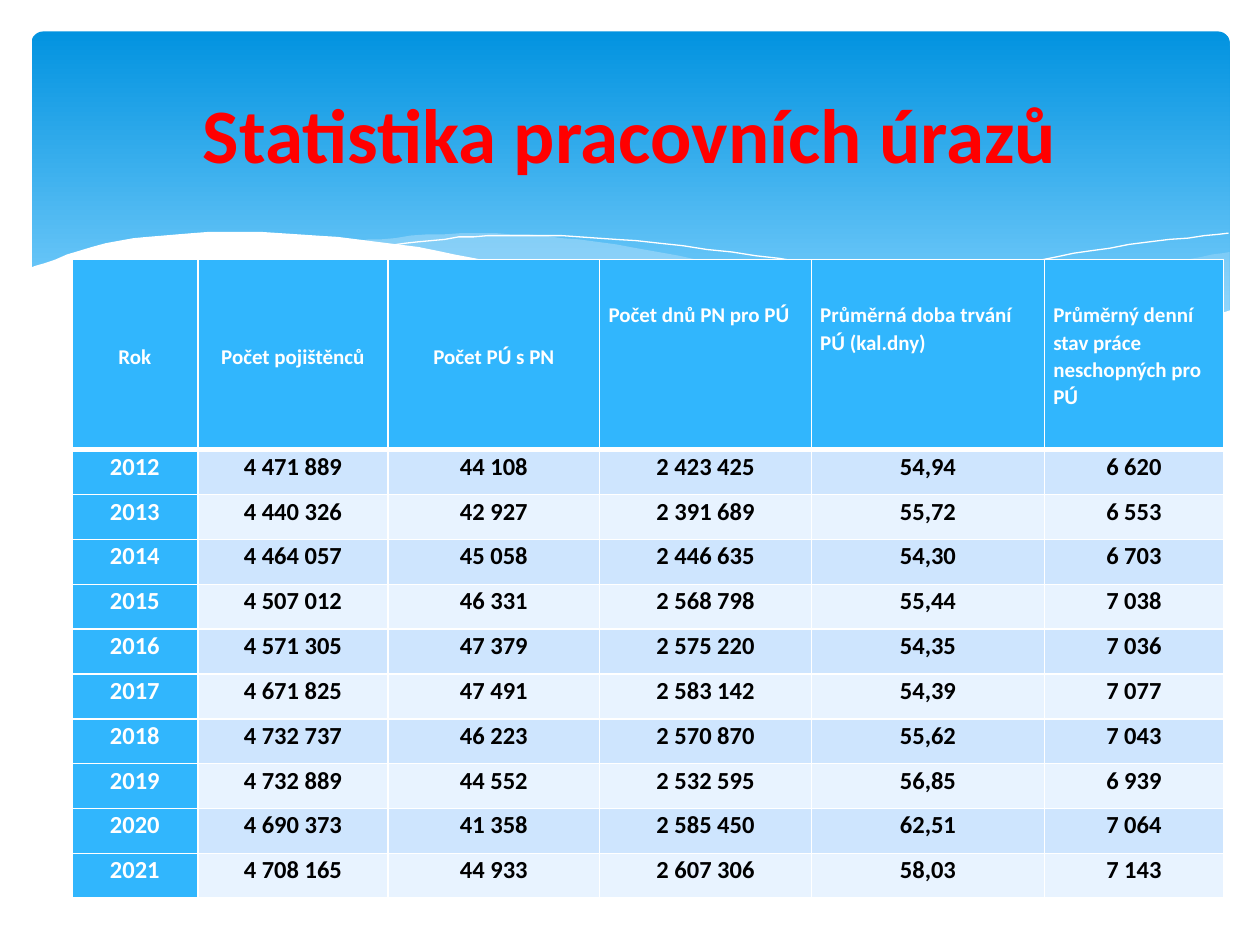
from lxml import etree
from pptx import Presentation
from pptx.dml.color import RGBColor
from pptx.enum.shapes import MSO_SHAPE
from pptx.enum.text import MSO_ANCHOR, PP_ALIGN
from pptx.oxml import parse_xml
from pptx.oxml.ns import qn
from pptx.util import Inches, Pt

ROUND = MSO_SHAPE.ROUNDED_RECTANGLE
MIDDLE, TOP = MSO_ANCHOR.MIDDLE, MSO_ANCHOR.TOP
CENTER, LEFT = PP_ALIGN.CENTER, PP_ALIGN.LEFT
FONT = "Calibri"
NS = "http://schemas.openxmlformats.org/drawingml/2006/main"
HEX = {"deep": "0293E0", "sky": "83D3FE", "mist": "C6E7FC", "white": "FFFFFF",
       "red": "FF0000", "black": "000000", "head": "31B6FD",
       "odd": "CEE5FE", "even": "E8F3FF"}
COLOR = {name: RGBColor.from_string(code) for name, code in HEX.items()}
STEPS = 8


def smooth(knots):
    """Return points on a Catmull-Rom curve through the knots."""
    ends = [knots[0], *knots, knots[-1]]
    points = []
    for four in zip(ends, ends[1:], ends[2:], ends[3:]):
        for step in range(STEPS):
            t = step / STEPS
            points.append(tuple(
                b + t * (c - a + t * (2 * a - 5 * b + 4 * c - d
                                      + t * (3 * b - a - 3 * c + d))) / 2
                for a, b, c, d in zip(*four)))
    return points + [knots[-1]]


def edge(cell, side, width):
    """Add one white border; call in the order L, R, T, B, before the fill."""
    cell._tc.get_or_add_tcPr().append(parse_xml(
        f'<a:ln{side} xmlns:a="{NS}" w="{Pt(width)}"><a:solidFill>'
        f'<a:srgbClr val="{HEX["white"]}"/></a:solidFill></a:ln{side}>'))


prs = Presentation()
prs.slide_width, prs.slide_height = Inches(10), Inches(7.5)
slide = prs.slides.add_slide(prs.slide_layouts[5])
shapes = slide.shapes

# Blue banner
banner = shapes.add_shape(ROUND, Inches(0.25), Inches(0.25), Inches(9.51), Inches(2.7))
banner.adjustments[0] = 0.034
banner.shadow.inherit = False
banner.line.fill.background()
banner.fill.gradient()
banner.fill.gradient_angle = 270
for stop, spot, name in zip(banner.fill.gradient_stops, (0, 0.9), ("deep", "sky")):
    stop.position = spot
    stop.color.rgb = COLOR[name]

# Waves: fill, opacity in percent, smooth stretches in inches.
# A wave without a fill is a thin white line.
WAVES = [
    ("mist", 29, [[(9.76, 2), (8.91, 2.16), (7.53, 2.48), (6.61, 2.65)],
                  [(6.61, 2.65), (7.69, 2.77), (8.63, 2.75), (9.76, 2.47)]]),
    ("mist", 40, [[(8.93, 2.73), (7.75, 2.54), (6.29, 2.22), (4.89, 1.94),
                   (3.8, 1.85), (2.86, 1.91)],
                  [(2.86, 1.91), (4.04, 2.11), (5.66, 2.48), (7.22, 2.74),
                   (8.18, 2.78), (8.93, 2.73)]]),
    (None, 100, [[(3.09, 1.95), (3.87, 1.87), (4.89, 1.9), (6.36, 2.08),
                  (7.6, 2.33), (9.07, 2.72)]]),
    (None, 100, [[(6.13, 2.57), (7.48, 2.23), (8.66, 1.99), (9.75, 1.85)]]),
    ("white", 100, [[(9.77, 2.46), (8.99, 2.69), (7.93, 2.76), (6.48, 2.62),
                     (4.47, 2.2), (3.16, 1.94), (1.93, 1.84), (0.95, 1.91),
                     (0.23, 2.13)],
                    [(0.23, 3.29), (9.77, 3.29)]]),
]
for name, alpha, parts in WAVES:
    points = [point for part in parts for point in smooth(part)]
    grid = [(round(x * 100), round(y * 100)) for x, y in points]
    pen = shapes.build_freeform(*grid[0], scale=Inches(0.01))
    pen.add_line_segments(grid[1:], close=name is not None)
    wave = pen.convert_to_shape()
    wave.shadow.inherit = False
    if name is None:
        wave.fill.background()
        wave.line.color.rgb = COLOR["white"]
        wave.line.width = Pt(0)
        continue
    wave.line.fill.background()
    wave.fill.solid()
    wave.fill.fore_color.rgb = COLOR[name]
    if alpha < 100:
        tint = wave._element.spPr.find(".//" + qn("a:srgbClr"))
        etree.SubElement(tint, qn("a:alpha")).set("val", str(alpha * 1000))

# Title, brought in front of the waves
title = shapes.title
title.left, title.top = Inches(0.5), Inches(0.37)
title.width, title.height = Inches(9), Inches(1.37)
title.text_frame.text = "Statistika pracovních úrazů"
title.text_frame.vertical_anchor = MIDDLE
para = title.text_frame.paragraphs[0]
para.alignment = CENTER
font = para.runs[0].font
font.name, font.size, font.bold = FONT, Pt(44), True
font.color.rgb = COLOR["red"]
shapes._spTree.append(title._element)

# Table of work injuries
HEADS = ["Rok", "Počet pojištěnců", "Počet PÚ s PN", "Počet dnů PN pro PÚ",
         "Průměrná doba trvání PÚ (kal.dny)",
         "Průměrný denní stav práce neschopných pro PÚ"]
ROWS = [
    ("2012", "4 471 889", "44 108", "2 423 425", "54,94", "6 620"),
    ("2013", "4 440 326", "42 927", "2 391 689", "55,72", "6 553"),
    ("2014", "4 464 057", "45 058", "2 446 635", "54,30", "6 703"),
    ("2015", "4 507 012", "46 331", "2 568 798", "55,44", "7 038"),
    ("2016", "4 571 305", "47 379", "2 575 220", "54,35", "7 036"),
    ("2017", "4 671 825", "47 491", "2 583 142", "54,39", "7 077"),
    ("2018", "4 732 737", "46 223", "2 570 870", "55,62", "7 043"),
    ("2019", "4 732 889", "44 552", "2 532 595", "56,85", "6 939"),
    ("2020", "4 690 373", "41 358", "2 585 450", "62,51", "7 064"),
    ("2021", "4 708 165", "44 933", "2 607 306", "58,03", "7 143"),
]
WIDTHS = [1, 1.51, 1.68, 1.68, 1.85, 1.42]
HIGH, HEAD = 5.07, 1.51
LINE = 0.33  # one header line with the space after it

table = shapes.add_table(len(ROWS) + 1, len(HEADS), Inches(0.57), Inches(2.06),
                         Inches(sum(WIDTHS)), Inches(HIGH)).table
table.horz_banding = False
for col, width in zip(table.columns, WIDTHS):
    col.width = Inches(width)

for r, words in enumerate([HEADS] + ROWS):
    table.rows[r].height = Inches((HIGH - HEAD) / len(ROWS) if r else HEAD)
    for c, word in enumerate(words):
        cell = table.cell(r, c)
        for side in "LRTB":
            thick = (r, side) in ((0, "B"), (1, "T"))
            edge(cell, side, 3 if thick else 1)
        blue = r == 0 or c == 0
        cell.fill.solid()
        cell.fill.fore_color.rgb = COLOR["head" if blue else "odd" if r % 2 else "even"]
        cell.margin_left = cell.margin_right = Inches(0.07)
        cell.margin_top = Inches(0 if r else LINE * (2 if c < 3 else 1))
        cell.margin_bottom = 0
        cell.vertical_anchor = TOP
        cell.text_frame.text = word
        para = cell.text_frame.paragraphs[0]
        para.alignment = CENTER if r or c < 3 else LEFT
        para.line_spacing, para.space_after = 1.07, Pt(8)
        font = para.runs[0].font
        font.name, font.size, font.bold = FONT, Pt(14 if r else 12), True
        font.color.rgb = COLOR["white" if blue else "black"]

prs.save("out.pptx")
